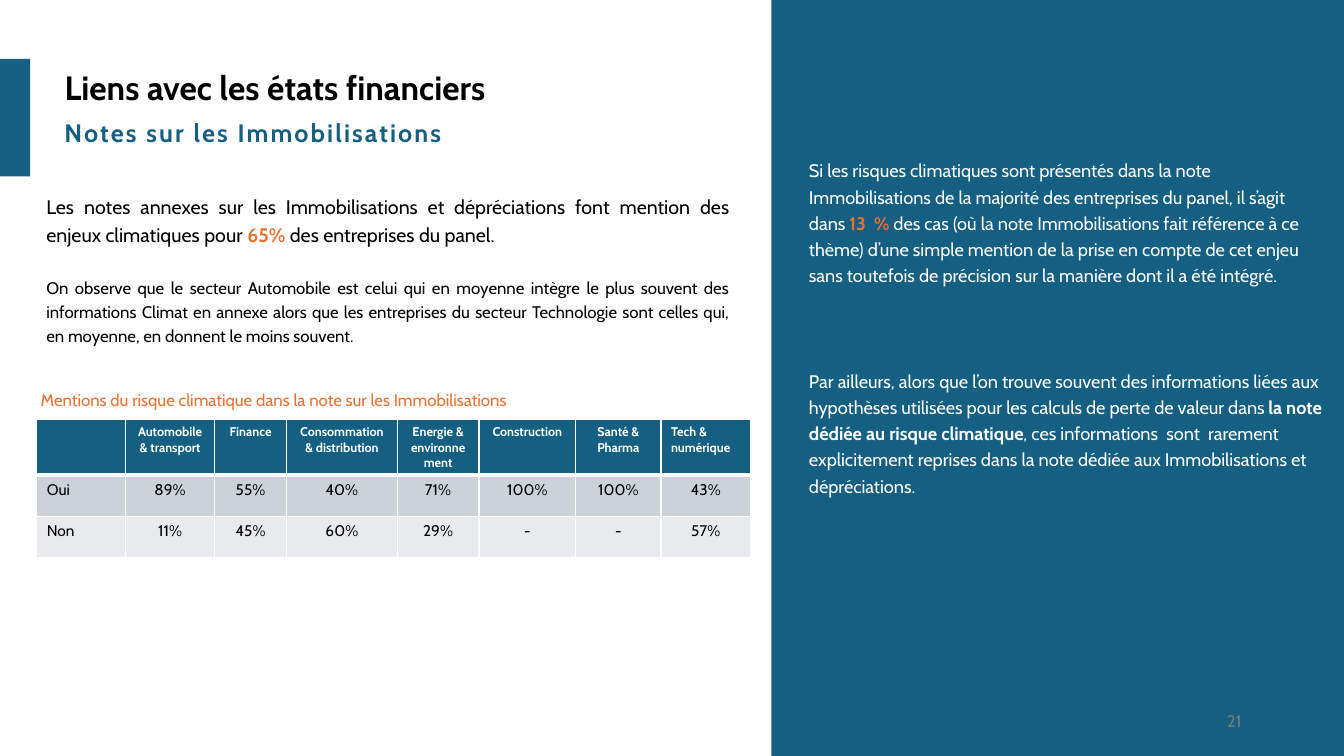
"""Build the slide on climate risk in the notes on fixed assets."""
from dataclasses import dataclass

from lxml.etree import SubElement
from pptx import Presentation
from pptx.dml.color import RGBColor as Rgb
from pptx.enum.shapes import MSO_SHAPE as Preset
from pptx.enum.text import MSO_ANCHOR as Anchor, PP_ALIGN as Align
from pptx.oxml.ns import qn
from pptx.slide import Slide
from pptx.table import _Cell as Cell
from pptx.text.text import _Run as Run
from pptx.util import Pt

FONT = "Cabin"
COLOURS = {
    "blue": "156082", "orange": "E97132", "black": "000000", "white": "FFFFFF",
    "grey": "797979", "dark_band": "CCD2D8", "light_band": "E8EAED",
}


@dataclass
class Piece:
    text: str
    size: float
    colour: str = "black"
    bold: bool = False
    tracking: float = 0


@dataclass
class Block:
    pieces: list[Piece]
    align: Align = Align.LEFT
    line_spacing: float = 1
    space_before: float = 0


@dataclass
class TextArea:
    left: float
    top: float
    width: float
    height: float
    blocks: list[Block]
    anchor: Anchor = Anchor.TOP


@dataclass
class Panel:
    left: float
    top: float
    width: float
    height: float


PANELS = [Panel(0, 42, 21.5, 84), Panel(551, 0, 409, 540)]

TEXT_AREAS = [
    TextArea(39, 44.5, 433, 36, [Block([Piece("Liens avec les états financiers", 24, bold=True)])]),
    TextArea(39, 80.5, 490, 29, [Block([Piece("Notes sur les Immobilisations", 18, "blue", True, 1.5)])]),
    TextArea(26, 132.5, 502.5, 138, [
        Block([
            Piece("Les notes annexes sur les Immobilisations et dépréciations font mention des "
                  "enjeux climatiques pour ", 14),
            Piece("65% ", 14, "orange", True),
            Piece("des entreprises du panel.", 14),
        ], Align.JUSTIFY, 1.2),
        Block([
            Piece("On observe que le secteur Automobile est celui qui en moyenne intègre le plus "
                  "souvent des informations Climat en annexe alors que les entreprises du secteur "
                  "Technologie sont celles qui, en moyenne, en donnent le moins souvent.", 12),
        ], Align.JUSTIFY, 1.2, 19),
    ]),
    TextArea(678, 500.5, 216, 29, [Block([Piece("21", 12, "grey")], Align.RIGHT)], Anchor.MIDDLE),
    TextArea(22, 274.5, 399, 22, [
        Block([Piece("Mentions du risque climatique dans la note sur les Immobilisations", 12, "orange")]),
    ]),
    TextArea(570.75, 107.5, 381, 252, [
        Block([
            Piece("Si les risques climatiques sont présentés dans la note Immobilisations de la "
                  "majorité des entreprises du panel, il s’agit dans ", 13, "white"),
            Piece("13  % ", 13, "orange", True),
            Piece("des cas (où la note Immobilisations fait référence à ce thème) d’une simple "
                  "mention de la prise en compte de cet enjeu sans toutefois de précision sur la "
                  "manière dont il a été intégré.", 13, "white"),
        ], line_spacing=1.2),
        Block([
            Piece("Par ailleurs, alors que l’on trouve souvent des informations liées aux "
                  "hypothèses utilisées pour les calculs de perte de valeur dans ", 13, "white"),
            Piece("la note dédiée au risque climatique", 13, "white", True),
            Piece(", ces informations  sont  rarement explicitement reprises dans la note dédiée "
                  "aux Immobilisations et dépréciations.", 13, "white"),
        ], line_spacing=1.2, space_before=56.5),
    ]),
]

COLUMN_WIDTHS = [63.5, 63.5, 51.5, 79, 58.5, 69, 61, 64]
ROW_HEIGHT = 29.3
ROW_FILLS = ["blue", "dark_band", "light_band"]
MENTIONS = [
    ["", "Automobile & transport", "Finance", "Consommation & distribution",
     "Energie & environnement", "Construction", "Santé & Pharma", "Tech & numérique"],
    ["Oui", "89%", "55%", "40%", "71%", "100%", "100%", "43%"],
    ["Non", "11%", "45%", "60%", "29%", "-", "-", "57%"],
]


def colour_of(name: str) -> Rgb:
    return Rgb.from_string(COLOURS[name])


def format_run(run: Run, piece: Piece) -> None:
    run.font.name = FONT
    run.font.size = Pt(piece.size)
    run.font.bold = piece.bold
    run.font.color.rgb = colour_of(piece.colour)
    if piece.tracking:
        run.font._element.set("spc", str(round(piece.tracking * 100)))


def draw_panel(slide: Slide, panel: Panel) -> None:
    shape = slide.shapes.add_shape(
        Preset.RECTANGLE, Pt(panel.left), Pt(panel.top), Pt(panel.width), Pt(panel.height))
    shape.shadow.inherit = False
    shape.fill.solid()
    shape.fill.fore_color.rgb = colour_of("blue")
    shape.line.fill.background()


def draw_text(slide: Slide, area: TextArea) -> None:
    box = slide.shapes.add_textbox(Pt(area.left), Pt(area.top), Pt(area.width), Pt(area.height))
    frame = box.text_frame
    frame.word_wrap = True
    frame.vertical_anchor = area.anchor
    for index, block in enumerate(area.blocks):
        paragraph = frame.add_paragraph() if index else frame.paragraphs[0]
        paragraph.alignment = block.align
        paragraph.line_spacing = block.line_spacing
        if block.space_before:
            paragraph.space_before = Pt(block.space_before)
        for piece in block.pieces:
            run = paragraph.add_run()
            run.text = piece.text
            format_run(run, piece)


def draw_borders(cell: Cell, widths: dict[str, float]) -> None:
    properties = cell._tc.get_or_add_tcPr()
    for side, width in widths.items():
        line = SubElement(properties, qn(f"a:ln{side}"), w=str(Pt(width)))
        fill = SubElement(line, qn("a:solidFill"))
        SubElement(fill, qn("a:srgbClr"), val=COLOURS["white"])


def draw_table(slide: Slide) -> None:
    table = slide.shapes.add_table(
        len(MENTIONS), len(COLUMN_WIDTHS), Pt(26.25), Pt(299.75),
        Pt(sum(COLUMN_WIDTHS)), Pt(ROW_HEIGHT * len(MENTIONS))).table
    table.first_row = table.horz_banding = False
    for column, width in zip(table.columns, COLUMN_WIDTHS):
        column.width = Pt(width)
    for row_index, values in enumerate(MENTIONS):
        table.rows[row_index].height = Pt(ROW_HEIGHT)
        header = row_index == 0
        for column_index, value in enumerate(values):
            cell = table.cell(row_index, column_index)
            top, bottom = 3 if row_index == 1 else 1, 3 if header else 1
            draw_borders(cell, {"L": 1, "R": 1, "T": top, "B": bottom})
            cell.fill.solid()
            cell.fill.fore_color.rgb = colour_of(ROW_FILLS[row_index])
            cell.text_frame.text = value
            paragraph = cell.text_frame.paragraphs[0]
            last_header = header and column_index == len(values) - 1
            paragraph.alignment = Align.LEFT if column_index == 0 or last_header else Align.CENTER
            style = Piece(value, 9, "white", True) if header else Piece(value, 11)
            for run in paragraph.runs:
                format_run(run, style)


def main() -> None:
    presentation = Presentation()
    presentation.slide_width, presentation.slide_height = Pt(960), Pt(540)
    slide = presentation.slides.add_slide(presentation.slide_layouts[6])
    for panel in PANELS:
        draw_panel(slide, panel)
    for area in TEXT_AREAS:
        draw_text(slide, area)
    draw_table(slide)
    presentation.save("out.pptx")


if __name__ == "__main__":
    main()
